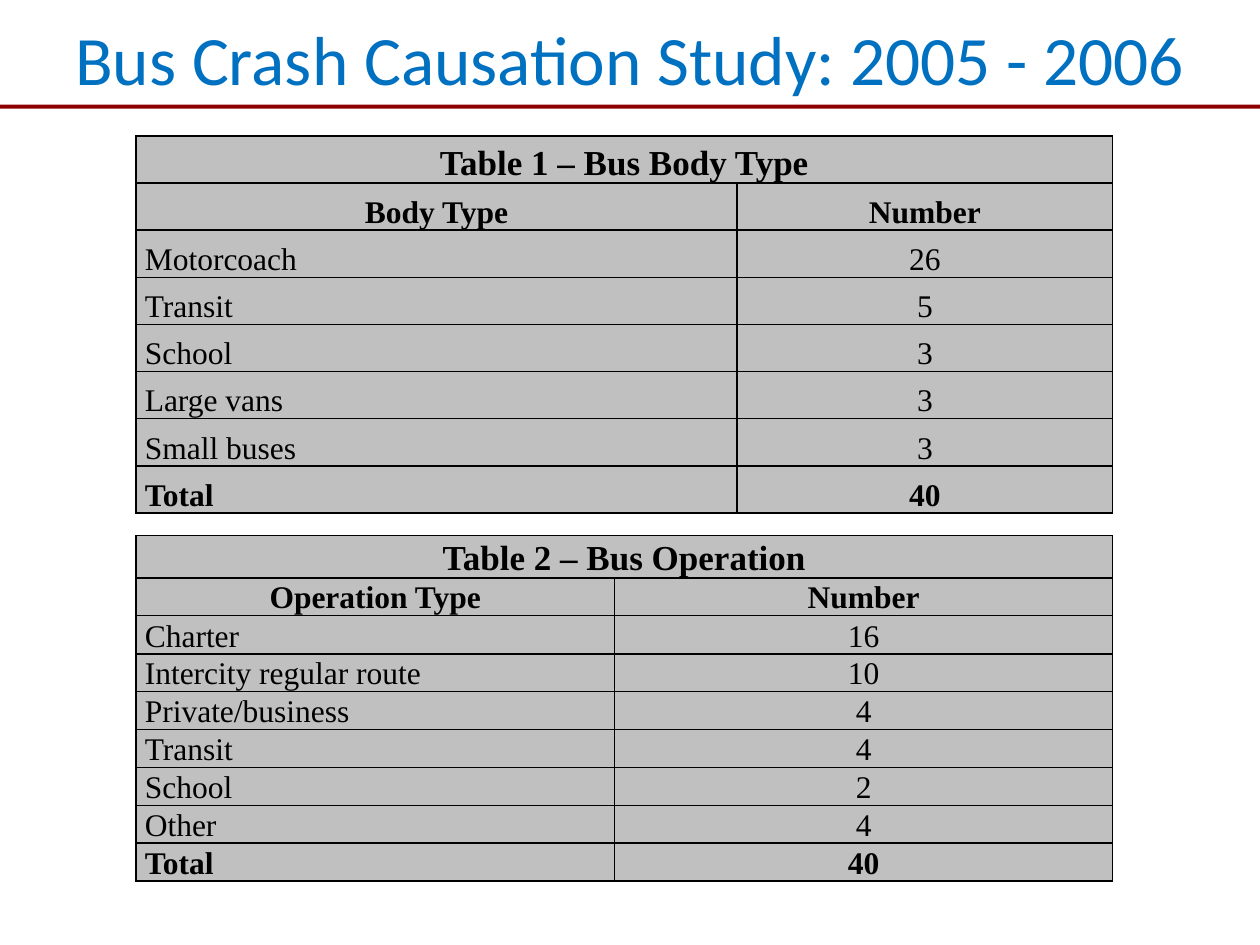
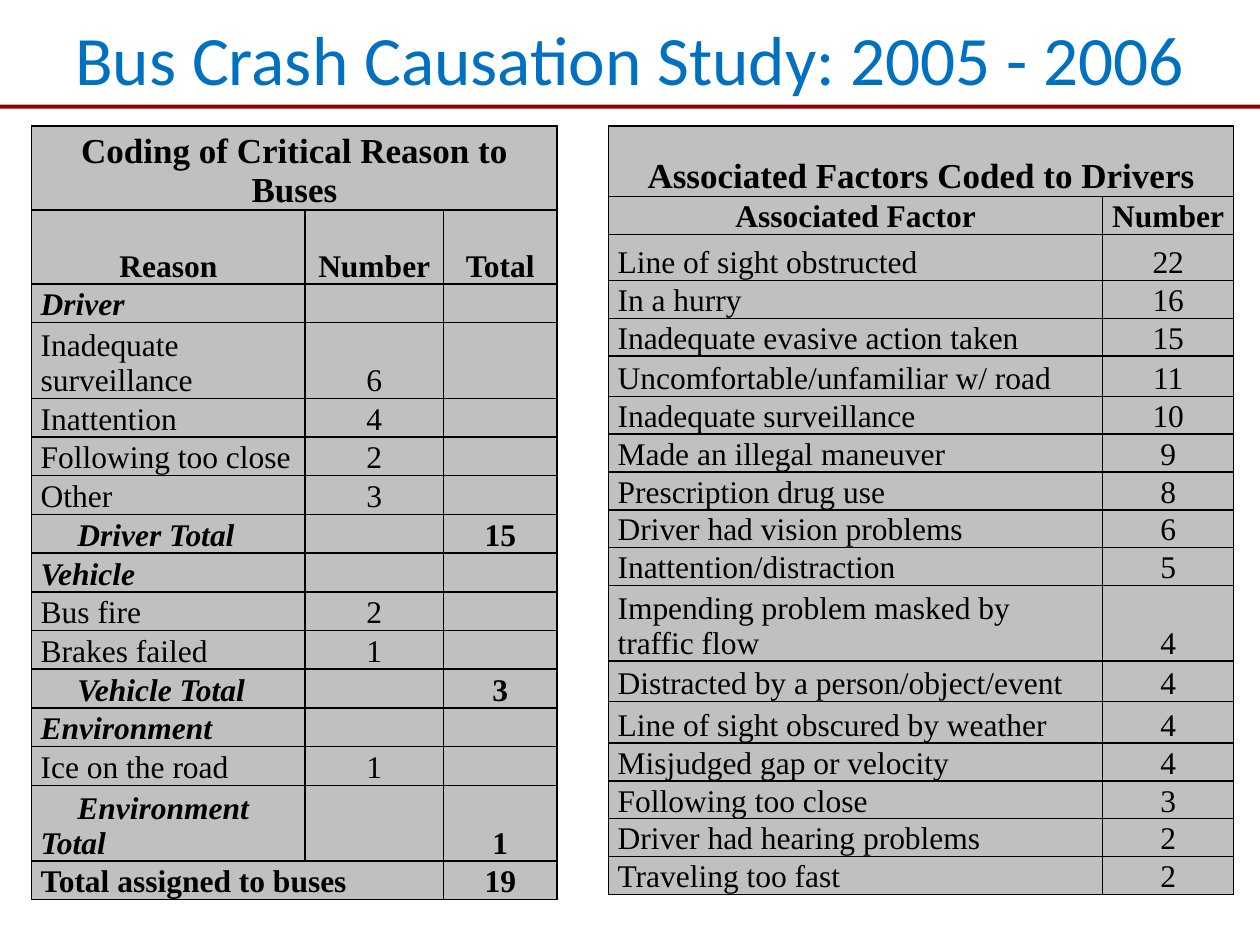
from dataclasses import dataclass
from lxml.etree import SubElement
from pptx import Presentation
from pptx.dml.color import RGBColor
from pptx.enum.shapes import MSO_SHAPE
from pptx.enum.text import MSO_ANCHOR, PP_ALIGN
from pptx.oxml import parse_xml
from pptx.oxml.ns import nsdecls, qn
from pptx.util import Cm, Pt


@dataclass(frozen=True)
class Theme:
    title_color: str = "0070C0"
    band: str = "8E0000"
    cell: str = "C0C0C0"
    ink: str = "000000"
    title_font: str = "Calibri"
    table_font: str = "Times New Roman"
    title_size: float = 39.6
    caption_size: float = 20
    body_size: float = 18
    border: float = 1


T = Theme()
TITLE = "Bus Crash Causation Study: 2005 - 2006"

BODY_TYPES = [
    ("Table 1 – Bus Body Type",),
    ("Body Type", "Number"),
    ("Motorcoach", "26"),
    ("Transit", "5"),
    ("School", "3"),
    ("Large vans", "3"),
    ("Small buses", "3"),
    ("Total", "40"),
]
OPERATIONS = [
    ("Table 2 – Bus Operation",),
    ("Operation Type", "Number"),
    ("Charter", "16"),
    ("Intercity regular route", "10"),
    ("Private/business", "4"),
    ("Transit", "4"),
    ("School", "2"),
    ("Other", "4"),
    ("Total", "40"),
]
REASONS = [
    ("Coding of Critical Reason to Buses",),
    ("Reason", "Number", "Total"),
    ("Driver",),
    ("Inadequate surveillance", "6"),
    ("Inattention", "4"),
    ("Following too close", "2"),
    ("Other", "3"),
    ("Driver Total", "", "15"),
    ("Vehicle",),
    ("Bus fire", "2"),
    ("Brakes failed", "1"),
    ("Vehicle Total", "", "3"),
    ("Environment",),
    ("Ice on the road", "1"),
    ("Environment Total", "", "1"),
    ("Total assigned to buses", "", "19"),
]
FACTORS = [
    ("Associated Factors Coded to Drivers",),
    ("Associated Factor", "Number"),
    ("Line of sight obstructed", "22"),
    ("In a hurry", "16"),
    ("Inadequate evasive action taken", "15"),
    ("Uncomfortable/unfamiliar w/ road", "11"),
    ("Inadequate surveillance", "10"),
    ("Made an illegal maneuver", "9"),
    ("Prescription drug use", "8"),
    ("Driver had vision problems", "6"),
    ("Inattention/distraction", "5"),
    ("Impending problem masked by traffic flow", "4"),
    ("Distracted by a person/object/event", "4"),
    ("Line of sight obscured by weather", "4"),
    ("Misjudged gap or velocity", "4"),
    ("Following too close", "3"),
    ("Driver had hearing problems", "2"),
    ("Traveling too fast", "2"),
]


def write(tf, text, font=T.table_font, size=T.body_size, color=T.ink,
          bold=False, italic=False, align=PP_ALIGN.LEFT, indent=0):
    p = tf.paragraphs[0]
    p.alignment = align
    if indent:
        pPr = p._p.get_or_add_pPr()
        pPr.set("marL", "0")
        pPr.set("indent", str(Cm(indent)))
    r = p.add_run()
    r.text = text
    f = r.font
    f.name, f.size, f.bold, f.italic = font, Pt(size), bold, italic
    f.color.rgb = RGBColor.from_string(color)


def add_header(s, width):
    band = s.shapes.add_shape(MSO_SHAPE.RECTANGLE, 0, Cm(2.11), width, Cm(0.08))
    band.shadow.inherit = False
    band.fill.solid()
    band.fill.fore_color.rgb = RGBColor.from_string(T.band)
    band.line.fill.background()
    margin = Cm(0.64)
    tf = s.shapes.add_textbox(margin, 0, width - 2 * margin, Cm(2.34)).text_frame
    tf.word_wrap = True
    tf.vertical_anchor = MSO_ANCHOR.MIDDLE
    write(tf, TITLE, font=T.title_font, size=T.title_size,
          color=T.title_color, align=PP_ALIGN.CENTER)


def format_cell(cell):
    cell.margin_left = cell.margin_right = Cm(0.18)
    cell.margin_top = cell.margin_bottom = 0
    cell.vertical_anchor = MSO_ANCHOR.BOTTOM
    cell.fill.solid()
    cell.fill.fore_color.rgb = RGBColor.from_string(T.cell)
    tcPr = cell._tc.get_or_add_tcPr()
    for i, side in enumerate(("lnL", "lnR", "lnT", "lnB")):
        ln = parse_xml(f'<a:{side} {nsdecls("a")} w="{Pt(T.border)}"/>')
        fill = SubElement(ln, qn("a:solidFill"))
        SubElement(fill, qn("a:srgbClr")).set("val", T.ink)
        tcPr.insert(i, ln)


def cell_format(i, j, row):
    label = row[0]
    caption, head = i == 0, i == 1
    grand = label.startswith("Total")
    subtotal = label.endswith(" Total")
    group = len(row) == 1 and not caption
    return dict(
        size=T.caption_size if caption else T.body_size,
        bold=caption or head or grand or subtotal or group,
        italic=j == 0 and (subtotal or group),
        align=PP_ALIGN.CENTER if caption or head or j else PP_ALIGN.LEFT,
        indent=0.74 if subtotal and j == 0 else 0,
    )


def add_data_table(s, left, top, rows, widths, height, special=None):
    heights = [(special or {}).get(i, height) for i in range(len(rows))]
    table = s.shapes.add_table(len(rows), len(widths), Cm(left), Cm(top),
                               Cm(sum(widths)), Cm(sum(heights))).table
    table.first_row = table.horz_banding = False
    for column, w in zip(table.columns, widths):
        column.width = Cm(w)
    for i, row in enumerate(rows):
        table.rows[i].height = Cm(heights[i])
        for j in range(len(widths)):
            cell = table.cell(i, j)
            format_cell(cell)
            if j < len(row) and row[j]:
                write(cell.text_frame, row[j], **cell_format(i, j, row))
    last = len(widths) - 1
    table.cell(0, 0).merge(table.cell(0, last))
    if last > 1:
        end = len(rows) - 1
        table.cell(end, 0).merge(table.cell(end, last - 1))


def add_slide(prs):
    s = prs.slides.add_slide(prs.slide_layouts[6])
    add_header(s, prs.slide_width)
    return s


def bus_types_slide(prs):
    s = add_slide(prs)
    left = 2.74
    add_data_table(s, left, 2.74, BODY_TYPES, (12.12, 7.57), 0.95)
    add_data_table(s, left, 10.8, OPERATIONS, (9.65, 10.04), 0.74, {0: 0.79, 2: 0.77})


def causes_slide(prs):
    s = add_slide(prs)
    top = 2.54
    add_data_table(s, 0.64, top, REASONS, (5.51, 2.79, 2.29), 0.78,
                   {0: 1.65, 1: 1.49, 3: 1.49, 14: 1.49})
    add_data_table(s, 12.27, top, FACTORS, (9.96, 2.64), 0.7,
                   {0: 1.42, 2: 0.93, 5: 0.81, 11: 1.41, 12: 0.81, 13: 0.84})


def main():
    prs = Presentation()
    prs.slide_width, prs.slide_height = Cm(25.4), Cm(19.05)
    bus_types_slide(prs)
    causes_slide(prs)
    prs.save("out.pptx")


if __name__ == "__main__":
    main()
